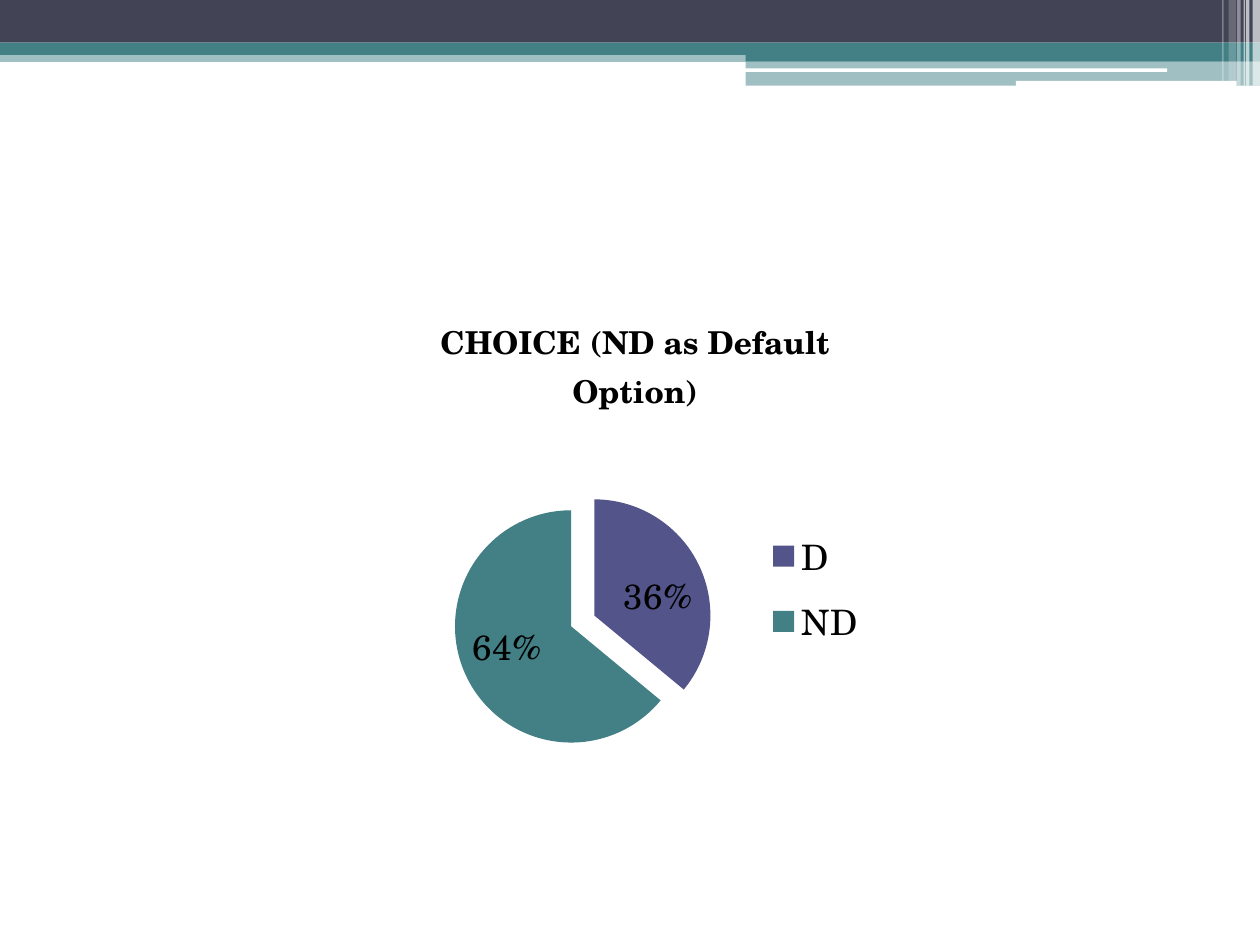
from lxml import etree
from pptx import Presentation
from pptx.chart.data import CategoryChartData
from pptx.dml.color import RGBColor
from pptx.enum.chart import XL_CHART_TYPE, XL_LABEL_POSITION, XL_LEGEND_POSITION
from pptx.enum.shapes import MSO_SHAPE
from pptx.oxml import parse_xml
from pptx.oxml.ns import nsdecls, qn
from pptx.util import Cm, Pt

PIE = XL_CHART_TYPE.PIE
RIGHT = XL_LEGEND_POSITION.RIGHT
INSIDE = XL_LABEL_POSITION.INSIDE_END
RECT = MSO_SHAPE.RECTANGLE
ROUND = MSO_SHAPE.ROUNDED_RECTANGLE

THEME = {
    "dark": "424456", "teal": "438086", "violet": "53548A",
    "white": "FFFFFF", "black": "000000",
    "font": "TeX Gyre Schola", "base": 10, "title": 18, "label": 20,
}
TITLE = "CHOICE (ND as Default Option)"
SLICES = [("D", 36, "violet"), ("ND", 64, "teal")]
BURST = 11

BANDS = [
    (RECT, 0, 1.02, 25.4, 0.23, "teal", 50),
    (RECT, 0, 0, 25.4, 0.86, "dark", 100),
    (RECT, 0, 0.86, 25.4, 0.25, "teal", 100),
    (RECT, 15.03, 1, 10.37, 0.23, "teal", 100),
    (RECT, 15.03, 1.23, 10.37, 0.5, "teal", 50),
    (ROUND, 15.01, 1.38, 8.52, 0.07, "white", 100),
    (ROUND, 20.48, 1.63, 4.45, 0.1, "white", 100),
]
STRIPES = [
    (25.25, 0.15, 1.73, 65),
    (25.12, 0.07, 1.73, 65),
    (25.07, 0.03, 1.73, 60),
    (24.94, 0.07, 1.73, 40),
    (24.77, 0.15, 1.63, 20),
    (24.64, 0.03, 1.63, 30),
]
FRAME = (6.35, 5.72, 12.7, 10)


def tint(name):
    return RGBColor.from_string(THEME[name])


def style(font, size, bold=False):
    font.name = THEME["font"]
    font.size = Pt(size)
    font.bold = bold
    font.color.rgb = tint("black")


def draw_band(slide, kind, x, y, w, h, color, alpha):
    band = slide.shapes.add_shape(kind, Cm(x), Cm(y), Cm(w), Cm(h))
    band.shadow.inherit = False
    band.line.fill.background()
    band.fill.solid()
    band.fill.fore_color.rgb = tint(color)
    if alpha < 100:
        node = band.fill._xPr.find(".//" + qn("a:srgbClr"))
        etree.SubElement(node, qn("a:alpha"), val=str(alpha * 1000))


def place(node, index, inner=False, **spots):
    for old in node.findall(qn("c:layout")):
        node.remove(old)
    parts = '<c:layoutTarget val="inner"/>' if inner else ""
    parts += "".join(f'<c:{key}Mode val="edge"/>' for key in "xy")
    parts += "".join(f'<c:{key} val="{val}"/>' for key, val in spots.items())
    node.insert(index, parse_xml(
        f'<c:layout {nsdecls("c")}><c:manualLayout>{parts}'
        "</c:manualLayout></c:layout>"))


def draw_chart(slide):
    data = CategoryChartData()
    data.categories = [name for name, _, _ in SLICES]
    data.add_series("Series 1", [val for _, val, _ in SLICES])
    chart = slide.shapes.add_chart(PIE, *map(Cm, FRAME), data).chart
    style(chart.font, THEME["base"])

    chart.has_title = True
    head = chart.chart_title
    head.text_frame.text = TITLE
    style(head.text_frame.paragraphs[0].font, THEME["title"], True)
    head.include_in_layout = False if hasattr(head, "include_in_layout") else None
    place(head._element, 1, x=0.19, y=0.05)

    chart.has_legend = True
    legend = chart.legend
    legend.position = RIGHT
    legend.include_in_layout = False
    style(legend.font, THEME["label"])
    place(legend._element, 1, x=0.72, y=0.47, w=0.15, h=0.29)

    plot = chart.plots[0]
    plot.vary_by_categories = True
    plot.has_data_labels = True
    labels = plot.data_labels
    labels.show_percentage = True
    labels.show_value = False
    labels.number_format = "0%"
    labels.number_format_is_linked = False
    labels.position = INSIDE
    style(labels.font, THEME["label"])

    series = plot.series[0]
    for i, (_, _, color) in enumerate(SLICES):
        fill = series.points[i].format.fill
        fill.solid()
        fill.fore_color.rgb = tint(color)
    burst = parse_xml(f'<c:explosion {nsdecls("c")} val="{BURST}"/>')
    series._element.find(qn("c:dPt")).addprevious(burst)
    area = chart._chartSpace.find(".//" + qn("c:plotArea"))
    place(area, 0, True, x=0.22, y=0.42, w=0.41, h=0.52)


def main():
    deck = Presentation()
    deck.slide_width, deck.slide_height = Cm(25.4), Cm(19.05)
    slide = deck.slides.add_slide(deck.slide_layouts[6])
    for band in BANDS:
        draw_band(slide, *band)
    for x, w, h, alpha in STRIPES:
        draw_band(slide, RECT, x, 0, w, h, "white", alpha)
    draw_chart(slide)
    deck.save("out.pptx")


if __name__ == "__main__":
    main()
